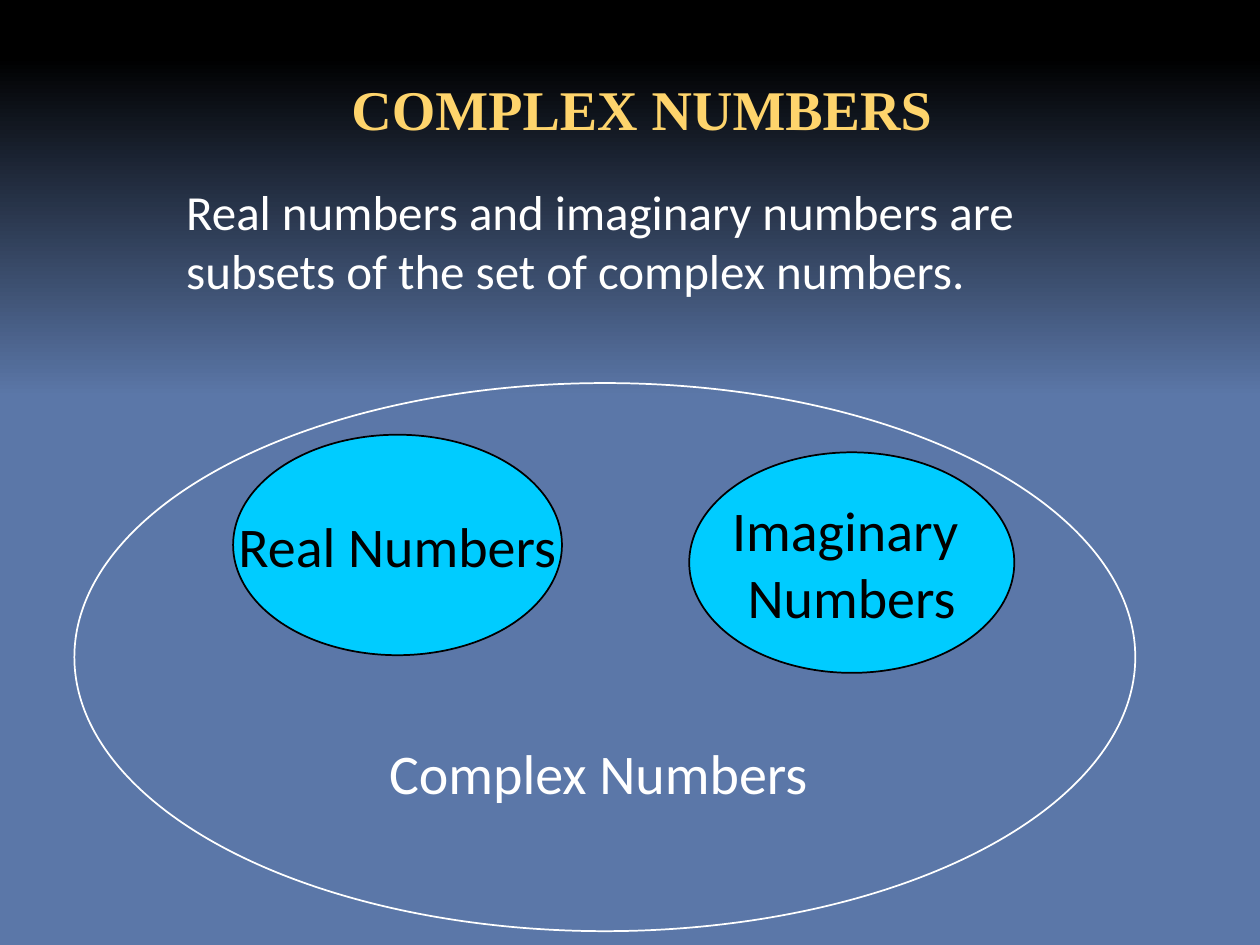
import copy

import pptx
import pptx.dml.color
import pptx.enum.shapes
import pptx.enum.text
import pptx.util

Inches = pptx.util.Inches
Pt = pptx.util.Pt
Align = pptx.enum.text.PP_ALIGN
Anchor = pptx.enum.text.MSO_ANCHOR

COLORS = {
    "black": "000000",
    "blue": "5B77A8",
    "cyan": "00CCFF",
    "white": "FFFFFF",
    "gold": "FED46C",
}
BACKGROUND_STOPS = [(0, "black"), (6, "black"), (42, "blue")]

SETS = [
    {"lines": ["Complex Numbers "], "at": (0.59, 3.04, 8.42, 4.35),
     "fill": None, "ink": "white", "top": 1.88},
    {"lines": ["Real Numbers"], "at": (1.85, 3.45, 2.61, 1.75),
     "fill": "cyan", "ink": "black", "top": 0.05},
    {"lines": ["Imaginary ", "Numbers"], "at": (5.47, 3.59, 2.58, 1.75),
     "fill": "cyan", "ink": "black", "top": 0.05},
]
TEXTS = [
    {"lines": ["Real numbers and imaginary numbers are subsets of the set of complex numbers."],
     "at": (1.38, 1.39, 6.93, 1.51), "size": 28, "font": "Calibri",
     "ink": "white", "bold": False, "align": Align.LEFT},
    {"lines": ["COMPLEX NUMBERS"], "at": (2.01, 0.54, 6.17, 0.64), "size": 32,
     "font": "Times New Roman", "ink": "gold", "bold": True, "align": Align.CENTER},
]


def color(name):
    return pptx.dml.color.RGBColor.from_string(COLORS[name])


def paint_background(page):
    fill = page.background.fill
    fill.gradient()
    fill.gradient_angle = 270
    first = fill.gradient_stops[0]._gs
    first.addnext(copy.deepcopy(first))
    for stop, (percent, name) in zip(fill.gradient_stops, BACKGROUND_STOPS):
        stop.position = percent / 100
        stop.color.rgb = color(name)


def write(frame, lines, ink, size=32, font="Calibri", bold=False, align=Align.CENTER):
    for index, line in enumerate(lines):
        para = frame.add_paragraph() if index else frame.paragraphs[0]
        para.text = line
        para.alignment = align
        para.font.size = Pt(size)
        para.font.name = font
        para.font.bold = bold
        para.font.color.rgb = color(ink)


def add_set(page, lines, at, fill, ink, top):
    oval = page.shapes.add_shape(
        pptx.enum.shapes.MSO_SHAPE.OVAL, *map(Inches, at))
    oval.shadow.inherit = False
    if fill:
        oval.fill.solid()
        oval.fill.fore_color.rgb = color(fill)
    else:
        oval.fill.background()
    oval.line.color.rgb = color(ink)
    oval.line.width = Pt(1)
    frame = oval.text_frame
    frame.word_wrap = False
    frame.vertical_anchor = Anchor.MIDDLE
    frame.margin_top = Inches(top)
    write(frame, lines, ink)


def add_text(page, at, **style):
    box = page.shapes.add_textbox(*map(Inches, at))
    box.text_frame.word_wrap = True
    write(box.text_frame, **style)


def main():
    deck = pptx.Presentation()
    deck.slide_width, deck.slide_height = Inches(10), Inches(7.5)
    page = deck.slides.add_slide(deck.slide_layouts[6])
    paint_background(page)
    for item in SETS:
        add_set(page, **item)
    for item in TEXTS:
        add_text(page, **item)
    deck.save("out.pptx")


if __name__ == "__main__":
    main()
